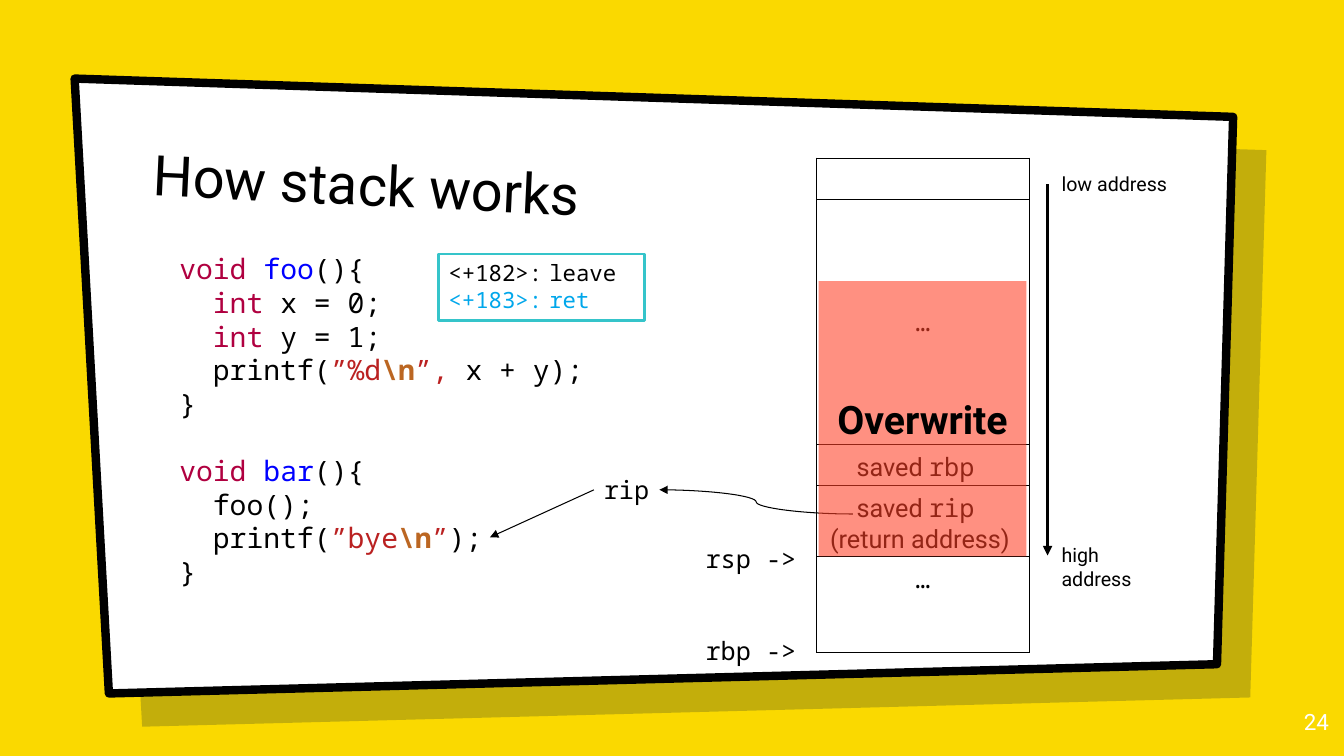
from dataclasses import dataclass

from lxml import etree
from pptx import Presentation
from pptx.dml.color import RGBColor
from pptx.enum import shapes, text
from pptx.oxml import ns
from pptx.util import Inches, Pt


@dataclass(frozen=True)
class Theme:
    sans: str = "Roboto"
    mono: str = "Noto Sans Mono"
    yellow: str = "FAD900"
    black: str = "000000"
    white: str = "FFFFFF"
    shade: str = "001936"
    teal: str = "35C4CA"
    cyan: str = "00A7EB"
    red: str = "FF4026"
    keyword: str = "B00040"
    function: str = "0000FF"
    string: str = "BA2121"
    escape: str = "BB6622"
    title: int = 40
    emphasis: int = 28
    code: int = 20
    label: int = 18
    small: int = 16
    note: int = 14


THEME = Theme()

CODE = [
    [("void ", "keyword"), ("foo", "function"), ("(){", "black")],
    [("  ", "black"), ("int", "keyword"), (" x = 0;", "black")],
    [("  int", "keyword"), (" y = 1;", "black")],
    [("  printf(", "black"), ("”%d", "string"), ("\\n", "escape"),
     ("”, ", "string"), ("x + y);", "black")],
    [("}", "black")],
    [],
    [("void ", "keyword"), ("bar", "function"), ("(){", "black")],
    [("  foo();", "black")],
    [("  printf(", "black"), ("”bye", "string"), ("\\n", "escape"),
     ("”", "string"), (");", "black")],
    [("}", "black")],
]

# Row height and lines of each stack cell; a line is a list of (text, font)
STACK = [
    (0.41, []),
    (2.43, [[("…", THEME.mono)]]),
    (0.41, [[("saved ", THEME.sans), ("rbp ", THEME.mono)]]),
    (0.41, [[("saved ", THEME.sans), ("rip ", THEME.mono)],
            [("(return address) ", THEME.sans)]]),
    (0.95, [[("…", THEME.mono)]]),
]


def rgb(color):
    return RGBColor.from_string(color)


def set_font(font, size, name=THEME.sans, color=THEME.black):
    font.size, font.name = Pt(size), name
    font.color.rgb = rgb(color)


def fill_shape(shape, color, alpha=None, line=None, width=0):
    """Fill a shape, with alpha in percent, and outline it if a line colour is given."""
    shape.shadow.inherit = False
    shape.fill.solid()
    shape.fill.fore_color.rgb = rgb(color)
    if alpha is not None:
        srgb = shape._element.spPr.find(".//" + ns.qn("a:srgbClr"))
        etree.SubElement(srgb, ns.qn("a:alpha"), val=str(alpha * 1000))
    if line:
        shape.line.color.rgb = rgb(line)
        shape.line.width = Pt(width)
    else:
        shape.line.fill.background()


def add_label(slide, box, words, size, name=THEME.mono, color=THEME.black, wrap=False):
    label = slide.shapes.add_textbox(*map(Inches, box))
    label.text_frame.word_wrap = wrap
    paragraph = label.text_frame.paragraphs[0]
    paragraph.text = words
    set_font(paragraph.font, size, name, color)
    return label


def add_arrow(slide, start, end, width=0.75, kind=shapes.MSO_CONNECTOR.STRAIGHT):
    arrow = slide.shapes.add_connector(kind, *map(Inches, (*start, *end)))
    arrow.line.color.rgb = rgb(THEME.black)
    arrow.line.width = Pt(width)
    etree.SubElement(arrow.line._get_or_add_ln(), ns.qn("a:tailEnd"), type="triangle")
    etree.SubElement(arrow._element.spPr, ns.qn("a:effectLst"))
    return arrow


def add_panel(slide, left, top):
    """Slanted white panel with its offset shade behind it."""
    corners = [(0, 0), (11.49, 0.38), (11.33, 5.81), (0.34, 6.1)]
    for offset, style in ((0.33, (THEME.shade, 22)),
                          (0, (THEME.white, None, THEME.black, 6))):
        points = [(Inches(left + offset + x), Inches(top + offset + y)) for x, y in corners]
        builder = slide.shapes.build_freeform(*points[0])
        builder.add_line_segments(points[1:], close=True)
        fill_shape(builder.convert_to_shape(), *style)


def add_title(slide, box, words):
    title = slide.shapes.title
    slide.shapes._spTree.append(title._element)  # in front of the panel
    title.left, title.top, title.width, title.height = map(Inches, box)
    title.rotation = 2.7
    frame = title.text_frame
    frame.text = words
    frame.vertical_anchor = text.MSO_ANCHOR.BOTTOM
    frame.margin_left = frame.margin_right = Inches(0.1)
    frame.margin_top = frame.margin_bottom = Inches(0.1)
    frame.paragraphs[0].alignment = text.PP_ALIGN.LEFT
    set_font(frame.paragraphs[0].font, THEME.title)


def add_page_number(slide, box, number):
    label = add_label(slide, box, number, THEME.small, THEME.sans, THEME.white, wrap=True)
    label.text_frame.margin_top = Inches(0.1)
    label.text_frame.paragraphs[0].alignment = text.PP_ALIGN.RIGHT


def add_code(slide, box):
    frame = slide.shapes.add_textbox(*map(Inches, box)).text_frame
    frame.word_wrap = True
    for index, tokens in enumerate(CODE):
        paragraph = frame.add_paragraph() if index else frame.paragraphs[0]
        set_font(paragraph.font, THEME.code, THEME.mono)
        for words, role in tokens:
            run = paragraph.add_run()
            run.text = words
            set_font(run.font, THEME.code, THEME.mono, getattr(THEME, role))
            run.font.bold = role == "escape"


def add_instructions(slide, box):
    shape = slide.shapes.add_shape(shapes.MSO_SHAPE.RECTANGLE, *map(Inches, box))
    fill_shape(shape, THEME.white, line=THEME.teal, width=2)
    frame = shape.text_frame
    frame.text = "<+182>:\tleave\n<+183>:\tret"
    frame.vertical_anchor = text.MSO_ANCHOR.TOP
    for paragraph, color in zip(frame.paragraphs, (THEME.black, THEME.cyan)):
        paragraph.alignment = text.PP_ALIGN.LEFT
        set_font(paragraph.font, THEME.small, THEME.mono, color)


def border_cell(cell):
    properties = cell._tc.get_or_add_tcPr()
    for position, side in enumerate(("a:lnL", "a:lnR", "a:lnT", "a:lnB")):
        line = etree.Element(ns.qn(side), w=str(Pt(1)))
        fill = etree.SubElement(line, ns.qn("a:solidFill"))
        etree.SubElement(fill, ns.qn("a:srgbClr"), val=THEME.black)
        properties.insert(position, line)


def add_stack(slide, left, top, width):
    height = sum(row_height for row_height, _ in STACK)
    table = slide.shapes.add_table(
        len(STACK), 1, *map(Inches, (left, top, width, height))).table
    table.first_row = table.horz_banding = False
    for index, (row_height, lines) in enumerate(STACK):
        table.rows[index].height = Inches(row_height)
        cell = table.cell(index, 0)
        cell.fill.background()
        border_cell(cell)
        cell.margin_left = cell.margin_right = Inches(0.08)
        for number, runs in enumerate(lines):
            frame = cell.text_frame
            paragraph = frame.add_paragraph() if number else frame.paragraphs[0]
            paragraph.alignment = text.PP_ALIGN.CENTER
            for words, name in runs:
                run = paragraph.add_run()
                run.text = words
                set_font(run.font, THEME.label, name)
    table.cell(1, 0).vertical_anchor = text.MSO_ANCHOR.MIDDLE


def add_address_axis(slide, left, top, length):
    add_label(slide, (left + 0.04, top - 0.17, 1.25, 0.34), "low address",
              THEME.note, THEME.sans)
    add_label(slide, (left + 0.04, top + length - 0.17, 1.25, 0.34), "high address",
              THEME.note, THEME.sans, wrap=True)
    add_arrow(slide, (left, top), (left, top + length), 2.25)


def add_return_path(slide, left, top):
    """The rip label, the jump to the code and the curve from the saved rip."""
    width, height = 0.65, 0.4
    middle = top + height / 2
    rip = add_label(slide, (left, top, width, height), "rip", THEME.label)
    jump = add_arrow(slide, (left, middle), (left - 1.03, middle + 0.47))
    jump.begin_connect(rip, 1)
    curve = add_arrow(slide, (left + 2.57, middle + 0.24), (left + width, middle),
                      kind=shapes.MSO_CONNECTOR.CURVE)
    curve.end_connect(rip, 3)


def add_overwrite(slide, box):
    shape = slide.shapes.add_shape(shapes.MSO_SHAPE.RECTANGLE, *map(Inches, box))
    fill_shape(shape, THEME.red, alpha=58)
    paragraph = shape.text_frame.paragraphs[0]
    paragraph.text = "Overwrite"
    paragraph.alignment = text.PP_ALIGN.CENTER
    set_font(paragraph.font, THEME.emphasis)
    paragraph.font.bold = True


def main():
    presentation = Presentation()
    presentation.slide_width, presentation.slide_height = Inches(13.33), Inches(7.5)
    slide = presentation.slides.add_slide(presentation.slide_layouts[5])
    slide.background.fill.solid()
    slide.background.fill.fore_color.rgb = rgb(THEME.yellow)
    add_panel(slide, 0.74, 0.78)
    add_title(slide, (1.42, 1.28, 10.25, 1.11), "How stack works")
    add_page_number(slide, (12.48, 6.93, 0.8, 0.57), "24")
    add_code(slide, (1.68, 2.45, 4.54, 3.8))
    add_stack(slide, 8.1, 1.57, 2.11)
    for register, top in (("rsp", 5.34), ("rbp", 6.25)):
        add_label(slide, (6.9, top, 1.11, 0.4), f"{register} ->", THEME.label)
    add_address_axis(slide, 10.39, 1.83, 3.68)
    add_instructions(slide, (4.35, 2.52, 2.04, 0.66))
    add_return_path(slide, 5.89, 4.66)
    add_overwrite(slide, (8.12, 2.79, 2.06, 2.73))
    presentation.save("out.pptx")


if __name__ == "__main__":
    main()
